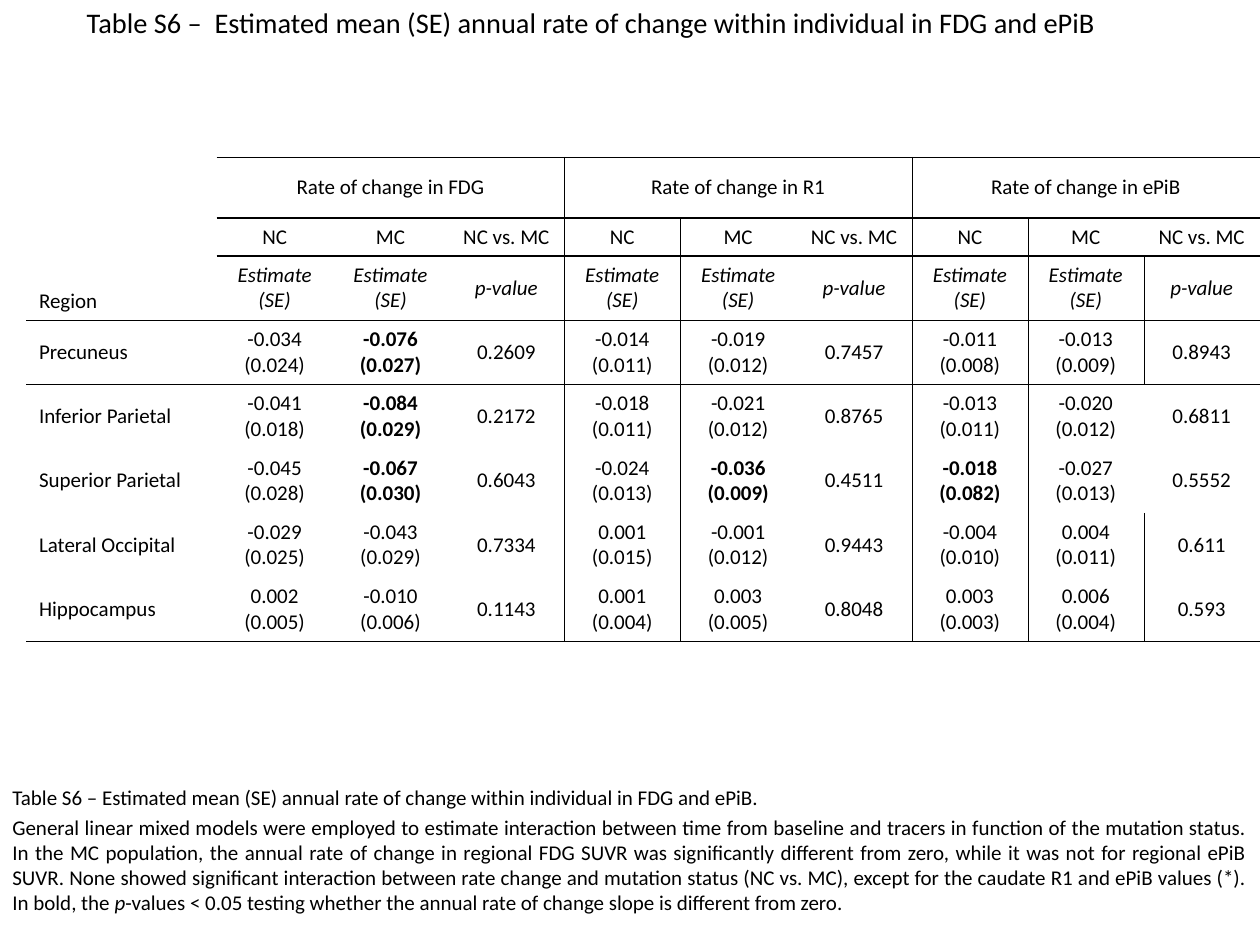
import pptx
import pptx.util
import pptx.dml.color
import pptx.enum.text
import pptx.oxml.ns
from lxml import etree

Inches, Pt = pptx.util.Inches, pptx.util.Pt
ANCHOR = pptx.enum.text.MSO_ANCHOR
ALIGN = pptx.enum.text.PP_ALIGN
qn = pptx.oxml.ns.qn

BLACK = pptx.dml.color.RGBColor(0x00, 0x00, 0x00)
FONT = "Calibri"
NO_STYLE_NO_GRID = "{2D5ABB26-0587-4C30-8999-92F81FD0307C}"
THICK, MEDIUM, THIN = 1, 0.5, 0.25


def format_runs(para, size, bold=False, italic=False):
    for span in para.runs:
        span.font.name = FONT
        span.font.size = Pt(size)
        span.font.color.rgb = BLACK
        span.font.bold = bold
        span.font.italic = italic


def add_border(cell, side, width):
    line = etree.SubElement(cell._tc.get_or_add_tcPr(), qn("a:ln" + side), w=str(Pt(width)))
    fill = etree.SubElement(line, qn("a:solidFill"))
    etree.SubElement(fill, qn("a:srgbClr"), val=str(BLACK))


deck = pptx.Presentation()
deck.slide_width = Inches(10)
deck.slide_height = Inches(7.5)
page = deck.slides.add_slide(deck.slide_layouts[6])

# Title
title = page.shapes.add_textbox(Inches(0.59), Inches(0), Inches(9), Inches(0.36))
title.text_frame.word_wrap = True
title.text_frame.vertical_anchor = ANCHOR.MIDDLE
title.text_frame.text = (
    "Table S6 –  Estimated mean (SE) annual rate of change within individual in FDG and ePiB"
)
format_runs(title.text_frame.paragraphs[0], 16.2)

# Table contents: region, then NC, MC and p-value for each of the three measures
measures = ["FDG", "R1", "ePiB"]
rows = [
    [""] + [text for name in measures for text in ("Rate of change in " + name, "", "")],
    [""] + ["NC", "MC", "NC vs. MC"] * 3,
    ["Region"] + ["Estimate (SE)", "Estimate (SE)", "p-value"] * 3,
    ["Precuneus", "-0.034 (0.024)", "-0.076 (0.027)", "0.2609", "-0.014 (0.011)",
     "-0.019 (0.012)", "0.7457", "-0.011 (0.008)", "-0.013 (0.009)", "0.8943"],
    ["Inferior Parietal", "-0.041 (0.018)", "-0.084 (0.029)", "0.2172", "-0.018 (0.011)",
     "-0.021 (0.012)", "0.8765", "-0.013 (0.011)", "-0.020 (0.012)", "0.6811"],
    ["Superior Parietal", "-0.045 (0.028)", "-0.067 (0.030)", "0.6043", "-0.024 (0.013)",
     "-0.036 (0.009)", "0.4511", "-0.018 (0.082)", "-0.027 (0.013)", "0.5552"],
    ["Lateral Occipital", "-0.029 (0.025)", "-0.043 (0.029)", "0.7334", "0.001 (0.015)",
     "-0.001 (0.012)", "0.9443", "-0.004 (0.010)", "0.004 (0.011)", "0.611"],
    ["Hippocampus", "0.002\n(0.005)", "-0.010\n(0.006)", "0.1143", "0.001\n(0.004)",
     "0.003\n(0.005)", "0.8048", "0.003\n(0.003)", "0.006\n(0.004)", "0.593"],
]
bold_cells = {(3, 2), (4, 2), (5, 2), (5, 5), (5, 7)}
column_widths = [1.51] + [0.92] * 9
row_heights = [0.48, 0.3, 0.51] + [0.51] * 5

# Rules: horizontal by the row below, vertical by (row, column to the right)
horizontal_rules = {0: THICK, 1: THICK, 3: MEDIUM, 8: THICK}
vertical_rules = {(row, column) for row in range(8) for column in (4, 7)}
vertical_rules |= {(row, 8) for row in (2, 3, 6, 7)}

# Table
frame = page.shapes.add_table(
    len(rows), len(column_widths), Inches(0.21), Inches(1.25),
    Inches(sum(column_widths)), Inches(sum(row_heights)),
)
table = frame.table
table.first_row = False
table.horz_banding = False
table._tbl.tblPr.find(qn("a:tableStyleId")).text = NO_STYLE_NO_GRID
for column, width in enumerate(column_widths):
    table.columns[column].width = Inches(width)
for row, height in enumerate(row_heights):
    table.rows[row].height = Inches(height)
for column in (1, 4, 7):
    table.cell(0, column).merge(table.cell(0, column + 2))

for row, texts in enumerate(rows):
    for column, text in enumerate(texts):
        cell = table.cell(row, column)
        cell.text_frame.text = text
        at_bottom = row == 1 or (row == 2 and column == 0)
        cell.vertical_anchor = ANCHOR.BOTTOM if at_bottom else ANCHOR.MIDDLE
        for para in cell.text_frame.paragraphs:
            para.alignment = ALIGN.CENTER if column else ALIGN.LEFT
            format_runs(para, 12, (row, column) in bold_cells, row == 2 and column > 0)
            if not text:
                etree.SubElement(para._p, qn("a:endParaRPr"), sz="1200")

        # Borders, in the order left, right, top, bottom
        if (row, column) in vertical_rules:
            add_border(cell, "L", THIN)
        if (row, column + 1) in vertical_rules:
            add_border(cell, "R", THIN)
        for side, edge in (("T", row), ("B", row + 1)):
            if edge in horizontal_rules and (column > 0 or edge >= 3):
                add_border(cell, side, horizontal_rules[edge])
        cell.fill.background()

# Caption
caption = page.shapes.add_textbox(Inches(0), Inches(6.18), Inches(10), Inches(1.19))
caption.text_frame.word_wrap = True
caption.text_frame.text = (
    "Table S6 – Estimated mean (SE) annual rate of change within individual in FDG and ePiB."
)
format_runs(caption.text_frame.paragraphs[0], 12)

note = caption.text_frame.add_paragraph()
note.alignment = ALIGN.JUSTIFY
note.space_before = Pt(2.4)
for text in (
    "General linear mixed models were employed to estimate interaction between time from "
    "baseline and tracers in function of the mutation status. In the MC population, the annual "
    "rate of change in regional FDG SUVR was significantly different from zero, while it was not "
    "for regional ePiB SUVR. None showed significant interaction between rate change and mutation "
    "status (NC vs. MC), except for the caudate R1 and ePiB values (*). In bold, the ",
    "p",
    "-values < 0.05 testing whether the annual rate of change slope is different from zero.",
):
    note.add_run().text = text
format_runs(note, 12)
note.runs[1].font.italic = True

deck.save("out.pptx")
